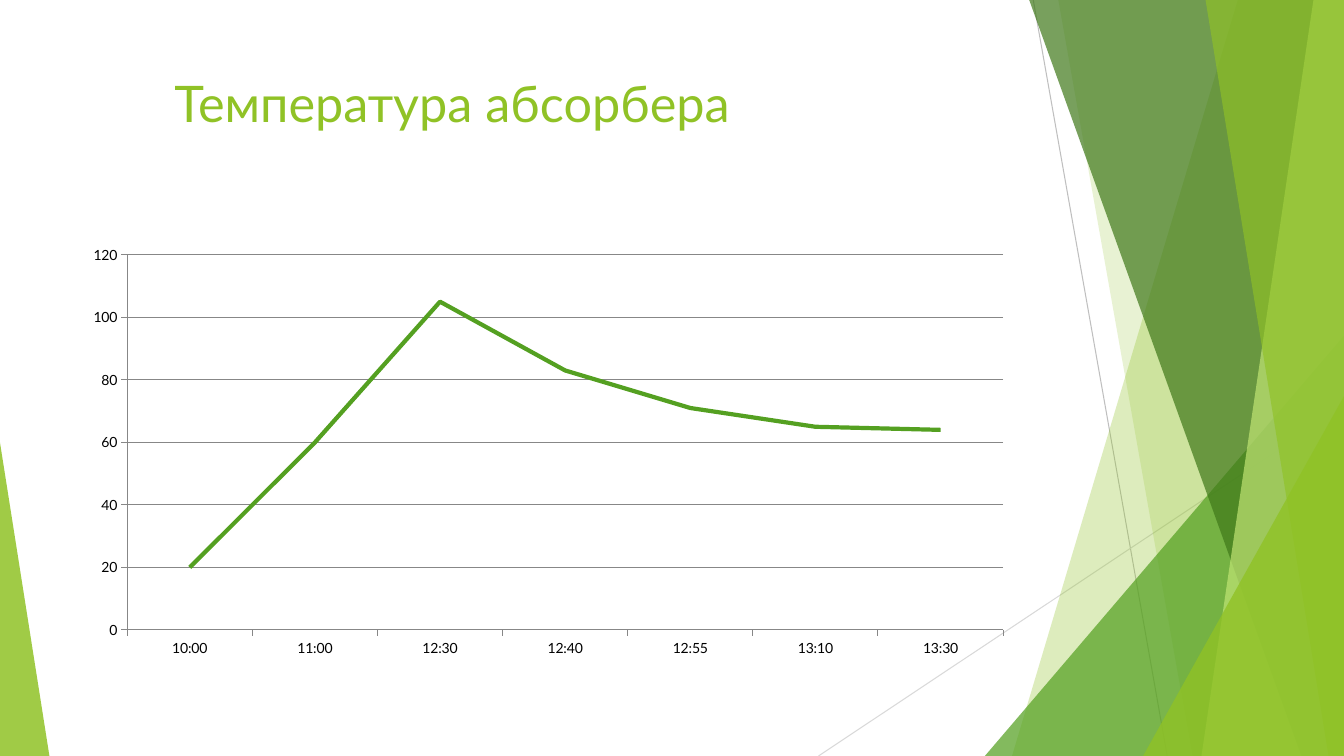
from dataclasses import dataclass
from typing import NamedTuple

from lxml import etree
from pptx import Presentation, util as u
from pptx.chart import data
from pptx.dml import color
from pptx.enum import chart as ch, shapes, text
from pptx.oxml import ns

W, H = u.Inches(13.333), u.Inches(7.5)


@dataclass(frozen=True)
class Theme:
    font: str = "Lato"
    lime: str = "90C226"
    pale: str = "C0E474"
    green: str = "54A021"
    forest: str = "3F7819"
    ink: str = "000000"
    grid: str = "878787"
    silver: str = "BFBFBF"
    mist: str = "D9D9D9"
    title_pt: int = 36
    label_pt: int = 10
    hairline_pt: float = 0.75
    series_pt: float = 3


class Ray(NamedTuple):
    x1: float
    y1: float
    x2: float
    y2: float
    rgb: str


class Band(NamedTuple):
    """Full-height facet between a slanted left edge and the right of the slide."""
    top_x: float
    bottom_x: float
    rgb: str
    opacity: int


class Corner(NamedTuple):
    """Right triangle standing on the bottom; apex is 0 (left) or 1 (right)."""
    left: float
    top: float
    width: float
    apex: int
    rgb: str
    opacity: int


T = Theme()

# Positions are percentages of the slide's width and height.
RAYS = [Ray(76.88, 0, 86.85, 100, T.silver), Ray(100, 53.73, 60.9, 100, T.mist)]
FACETS = [
    Band(92.1, 75.3, T.lime, 30),
    Band(78.75, 88.73, T.lime, 20),
    Corner(73.28, 44.4, 26.72, 1, T.green, 72),
    Band(76.58, 96.83, T.forest, 70),
    Band(97.73, 89.4, T.pale, 70),
    Band(89.7, 98.85, T.lime, 65),
    Corner(85.05, 52.4, 14.95, 1, T.lime, 80),
    Corner(0, 58.53, 3.68, 0, T.lime, 85),
]
TITLE_BOX = (5.55, 8.93, 70.5, 19.2)
CHART_BOX = (5.55, 31.47, 70.5, 56.53)
TEMPERATURES = {"10:00": 20, "11:00": 60, "12:30": 105, "12:40": 83,
                "12:55": 71, "13:10": 65, "13:30": 64}


def px(share: float) -> int:
    return round(W * share / 100)


def py(share: float) -> int:
    return round(H * share / 100)


def box(left: float, top: float, width: float, height: float) -> tuple[int, int, int, int]:
    return px(left), py(top), px(width), py(height)


def rgb(value: str) -> color.RGBColor:
    return color.RGBColor.from_string(value)


def set_line(line, value: str, width: float) -> None:
    line.color.rgb = rgb(value)
    line.width = u.Pt(width)


def add_ray(s, ray: Ray) -> None:
    c = s.shapes.add_connector(shapes.MSO_CONNECTOR.STRAIGHT,
                               px(ray.x1), py(ray.y1), px(ray.x2), py(ray.y2))
    set_line(c.line, ray.rgb, T.hairline_pt)
    etree.SubElement(c._element.spPr, ns.qn("a:effectLst"))


def add_facet(s, facet: Band | Corner) -> None:
    if isinstance(facet, Band):
        fb = s.shapes.build_freeform(px(facet.top_x), 0)
        fb.add_line_segments([(W, 0), (W, H), (px(facet.bottom_x), H)], close=True)
        sp = fb.convert_to_shape()
    else:
        sp = s.shapes.add_shape(shapes.MSO_SHAPE.ISOSCELES_TRIANGLE,
                                *box(facet.left, facet.top, facet.width, 100 - facet.top))
        sp.adjustments[0] = facet.apex
    sp.shadow.inherit = False
    sp.line.fill.background()
    sp.fill.solid()
    sp.fill.fore_color.rgb = rgb(facet.rgb)
    clr = sp._element.spPr.find(".//" + ns.qn("a:srgbClr"))
    etree.SubElement(clr, ns.qn("a:alpha"), val=str(facet.opacity * 1000))


def fill_title(s) -> None:
    title = s.shapes.title
    s.shapes._spTree.append(title._element)  # bring in front of the facets
    title.left, title.top, title.width, title.height = box(*TITLE_BOX)
    tf = title.text_frame
    tf.text = "Температура абсорбера"
    tf.word_wrap = True
    tf.auto_size = text.MSO_AUTO_SIZE.NONE
    tf.vertical_anchor = text.MSO_ANCHOR.TOP
    p = tf.paragraphs[0]
    p.alignment = text.PP_ALIGN.LEFT
    p._p.get_or_add_pPr().set("marL", str(u.Inches(0.89)))
    f = p.runs[0].font
    f.name, f.size, f.color.rgb = T.font, u.Pt(T.title_pt), rgb(T.lime)


def add_temperature_chart(s) -> None:
    cd = data.CategoryChartData()
    cd.categories = list(TEMPERATURES)
    cd.add_series("Series 1", list(TEMPERATURES.values()))
    chart = s.shapes.add_chart(ch.XL_CHART_TYPE.LINE_STACKED, *box(*CHART_BOX), cd).chart
    chart.has_legend = False
    chart.has_title = False
    f = chart.font
    f.name, f.size, f.color.rgb = T.font, u.Pt(T.label_pt), rgb(T.ink)

    plot = chart.plots[0]
    plot.vary_by_categories = False
    series = plot.series[0]
    series.smooth = False
    series.marker.style = ch.XL_MARKER_STYLE.NONE
    set_line(series.format.line, T.green, T.series_pt)

    for axis in (chart.category_axis, chart.value_axis):
        axis.major_tick_mark = ch.XL_TICK_MARK.OUTSIDE
        axis.minor_tick_mark = ch.XL_TICK_MARK.NONE
        set_line(axis.format.line, T.grid, T.hairline_pt)
    value_axis = chart.value_axis
    value_axis.minimum_scale, value_axis.maximum_scale = 0, 120
    value_axis.major_unit = 20
    value_axis.has_major_gridlines = True
    set_line(value_axis.major_gridlines.format.line, T.grid, T.hairline_pt)


def main() -> None:
    prs = Presentation()
    prs.slide_width, prs.slide_height = W, H
    s = prs.slides.add_slide(prs.slide_layouts.get_by_name("Title Only"))
    for ray in RAYS:
        add_ray(s, ray)
    for facet in FACETS:
        add_facet(s, facet)
    fill_title(s)
    add_temperature_chart(s)
    prs.save("out.pptx")


if __name__ == "__main__":
    main()
